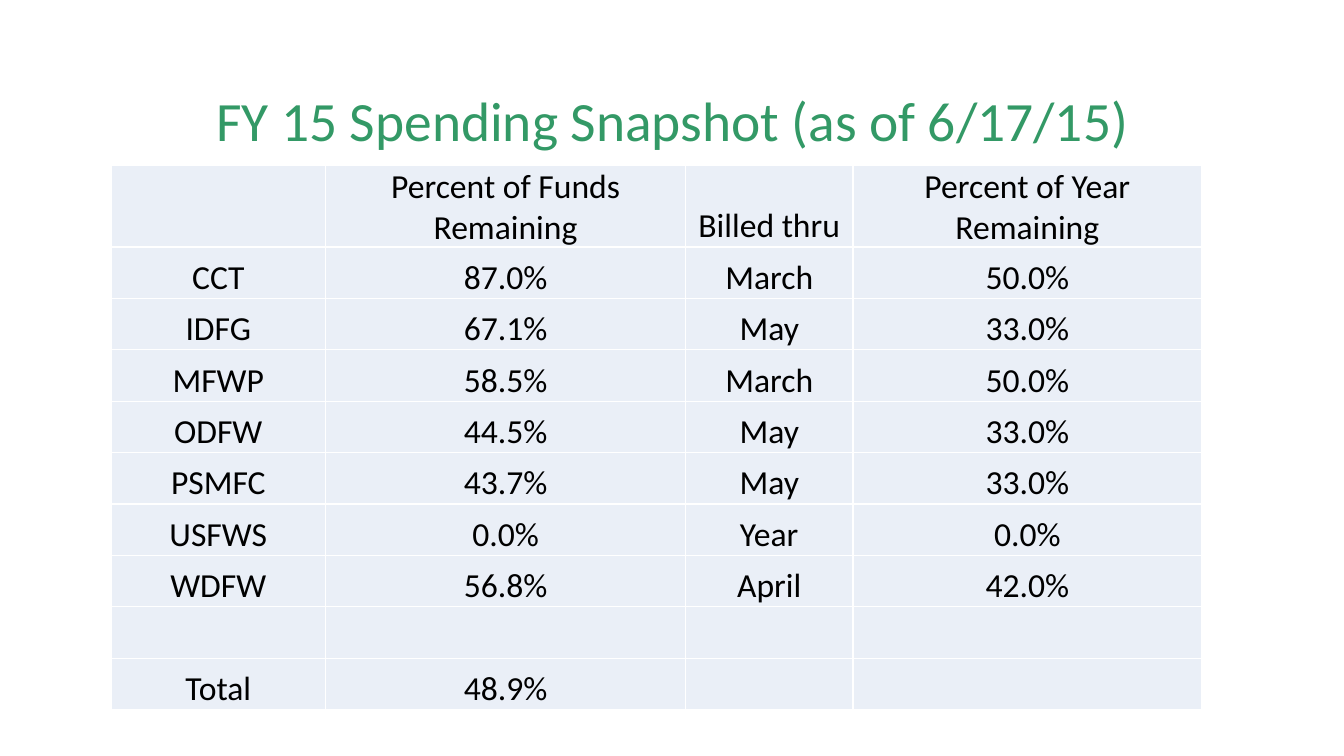
from dataclasses import dataclass

from lxml import etree
from pptx import Presentation
from pptx.dml.color import RGBColor
from pptx.enum import text
from pptx.oxml import ns
from pptx.util import Emu, Pt

PX = 9144  # 100 px to the inch


@dataclass(frozen=True)
class Theme:
    font: str = "Calibri"
    title: str = "339966"
    ink: str = "000000"
    cell: str = "EAEFF7"
    border: str = "FFFFFF"
    title_pt: float = 39.6
    cell_pt: float = 24
    border_pt: float = 1


THEME = Theme()
TITLE = "FY 15 Spending Snapshot (as of 6/17/15)"
COLUMN_WIDTHS = [213, 357, 166, 346]
ROW_HEIGHT = 51
SPENDING = [
    ["", "Percent of Funds Remaining", "Billed thru", "Percent of Year Remaining"],
    ["CCT", "87.0%", "March", "50.0%"],
    ["IDFG", "67.1%", "May", "33.0%"],
    ["MFWP", "58.5%", "March", "50.0%"],
    ["ODFW", "44.5%", "May", "33.0%"],
    ["PSMFC", "43.7%", "May", "33.0%"],
    ["USFWS", "0.0%", "Year", "0.0%"],
    ["WDFW", "56.8%", "April", "42.0%"],
    ["", "", "", ""],
    ["Total", "48.9%", "", ""],
]


def px(n):
    return Emu(n * PX)


def style_paragraph(p, size, color):
    p.alignment = text.PP_ALIGN.CENTER
    p.font.name = THEME.font
    p.font.size = Pt(size)
    p.font.color.rgb = RGBColor.from_string(color)


def add_title(slide, wording, x, y, w, h):
    tf = slide.shapes.add_textbox(px(x), px(y), px(w), px(h)).text_frame
    tf.word_wrap = True
    tf.vertical_anchor = text.MSO_ANCHOR.BOTTOM
    p = tf.paragraphs[0]
    p.text = wording
    p.line_spacing = 0.9
    style_paragraph(p, THEME.title_pt, THEME.title)


def set_borders(cell):
    """Draw all four edges; they must precede the fill in the cell properties."""
    tc_pr = cell._tc.get_or_add_tcPr()
    for i, edge in enumerate(("a:lnL", "a:lnR", "a:lnT", "a:lnB")):
        ln = etree.Element(ns.qn(edge), w=str(Pt(THEME.border_pt)))
        fill = etree.SubElement(ln, ns.qn("a:solidFill"))
        etree.SubElement(fill, ns.qn("a:srgbClr"), val=THEME.border)
        tc_pr.insert(i, ln)


def fill_cell(cell, wording):
    cell.fill.solid()
    cell.fill.fore_color.rgb = RGBColor.from_string(THEME.cell)
    cell.margin_left = cell.margin_right = cell.margin_top = px(1)
    cell.margin_bottom = 0
    cell.vertical_anchor = text.MSO_ANCHOR.BOTTOM
    p = cell.text_frame.paragraphs[0]
    if wording:
        p.text = wording
    style_paragraph(p, THEME.cell_pt, THEME.ink)
    set_borders(cell)


def add_grid(slide, rows, widths, row_height, x, y):
    table = slide.shapes.add_table(
        len(rows), len(widths), px(x), px(y),
        px(sum(widths)), px(row_height * len(rows))).table
    table.first_row = table.horz_banding = False
    for column, width in zip(table.columns, widths):
        column.width = px(width)
    for r, row in enumerate(rows):
        table.rows[r].height = px(row_height)
        for c, wording in enumerate(row):
            fill_cell(table.cell(r, c), wording)


def main():
    prs = Presentation()
    prs.slide_width, prs.slide_height = px(1333), px(750)
    slide = prs.slides.add_slide(prs.slide_layouts[6])
    add_title(slide, TITLE, 167, 30, 1000, 127)
    add_grid(slide, SPENDING, COLUMN_WIDTHS, ROW_HEIGHT, 110, 164)
    prs.save("out.pptx")


if __name__ == "__main__":
    main()
